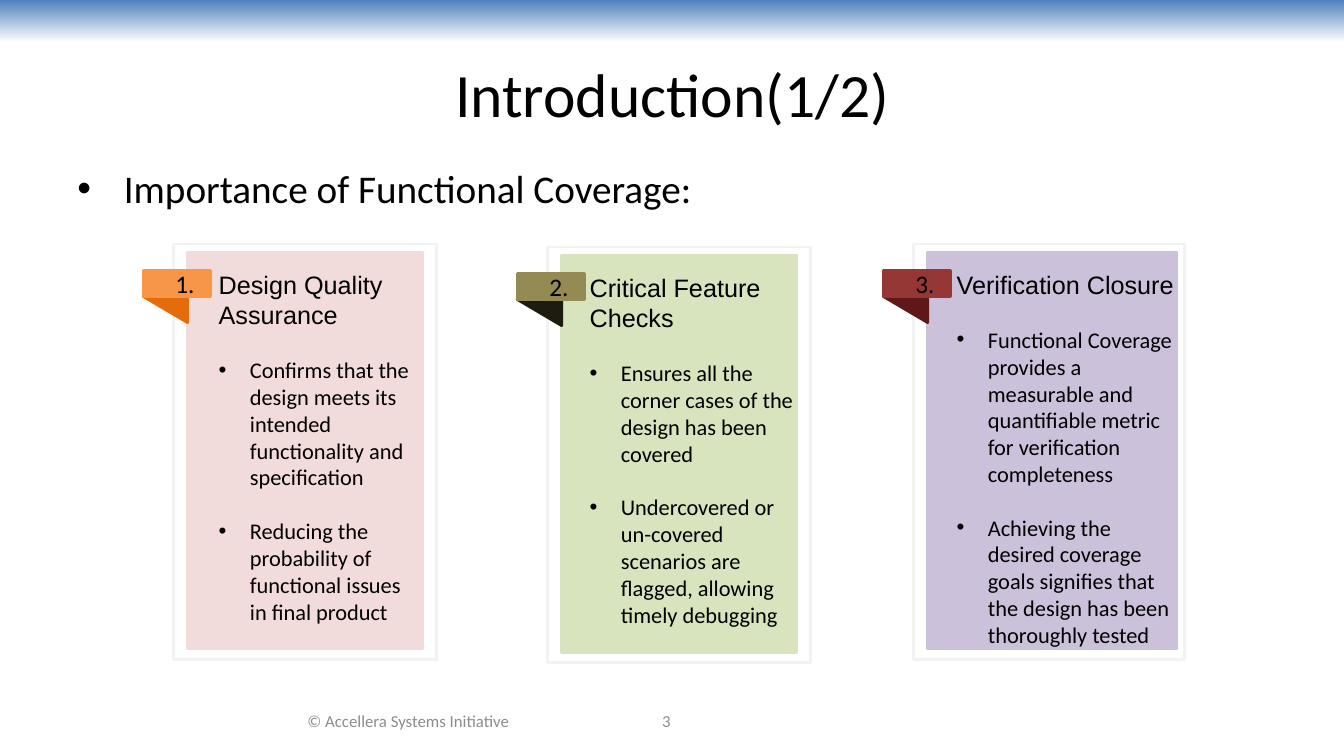
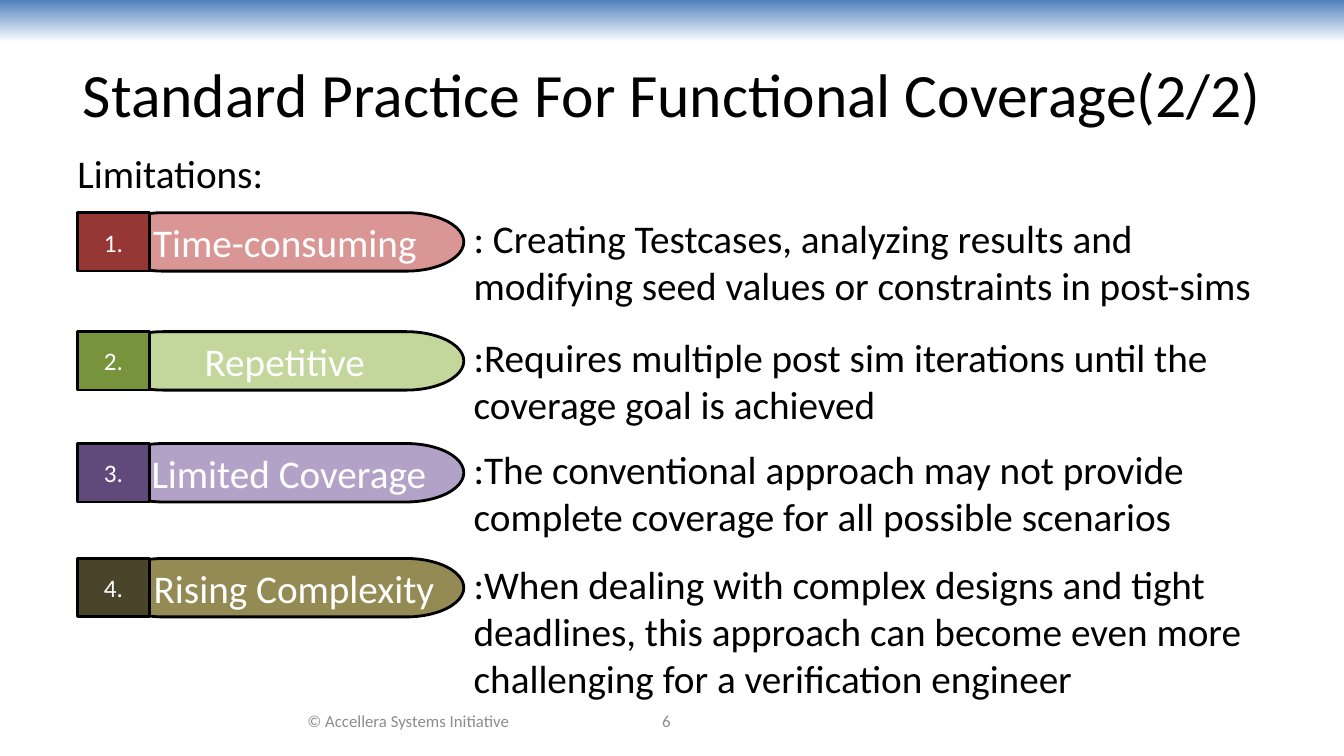
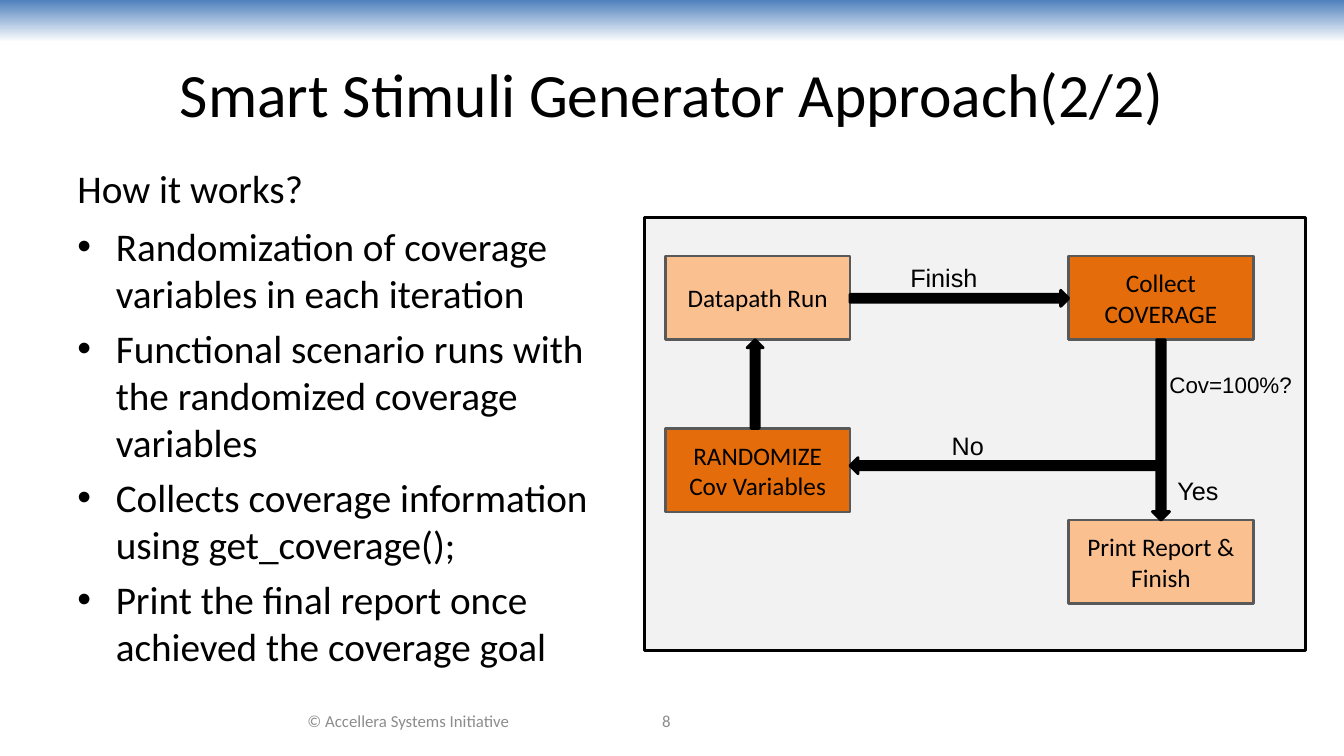
import pptx
import pptx.dml.color
import pptx.enum.shapes
import pptx.enum.text
import pptx.util
from lxml import etree
from pptx.oxml.ns import qn

Inches = pptx.util.Inches
Pt = pptx.util.Pt
SHAPE = pptx.enum.shapes.MSO_SHAPE
ALIGN = pptx.enum.text.PP_ALIGN
ANCHOR = pptx.enum.text.MSO_ANCHOR

BLACK, WHITE, GREY = "000000", "FFFFFF", "8C8C8C"
BLUE, FRAME, PALE, EDGE = "4F81BD", "F2F2F2", "F2F2F2", "595959"
PEACH, ORANGE = "FAC090", "E46C0A"
BODY, PLAIN = "Calibri", "Arial"
NOTICE = "© Accellera Systems Initiative"


def color(code):
    return pptx.dml.color.RGBColor.from_string(code)


def style(para, size, ink=BLACK, face=BODY, align=ALIGN.LEFT):
    para.alignment = align
    font = para.font
    font.size, font.name = Pt(size), face
    font.color.rgb = color(ink)


def bullet(para, indent):
    """Give the paragraph a round bullet with a hanging indent in inches."""
    props = para._p.get_or_add_pPr()
    props.set("marL", str(Inches(indent)))
    props.set("indent", str(-Inches(indent)))
    etree.SubElement(props, qn("a:buFont")).set("typeface", "Arial")
    etree.SubElement(props, qn("a:buChar")).set("char", "•")


def add_text(slide, box, words, size, ink=BLACK, face=BODY,
             align=ALIGN.LEFT, anchor=ANCHOR.TOP):
    frame = slide.shapes.add_textbox(*map(Inches, box)).text_frame
    frame.word_wrap = True
    frame.vertical_anchor = anchor
    para = frame.paragraphs[0]
    para.text = words
    style(para, size, ink, face, align)
    return frame


def add_list(slide, box, items, indent):
    frame = slide.shapes.add_textbox(*map(Inches, box)).text_frame
    frame.word_wrap = True
    for i, item in enumerate(items):
        para = frame.add_paragraph() if i else frame.paragraphs[0]
        para.text = item
        bullet(para, indent)
        if i:
            para.space_before = Pt(5.6)
        style(para, 28)


def add_shape(slide, kind, box, fill=None, line=None, words="",
              size=18, ink=BLACK):
    shape = slide.shapes.add_shape(kind, *map(Inches, box))
    shape.shadow.inherit = False
    if fill:
        shape.fill.solid()
        shape.fill.fore_color.rgb = color(fill)
    else:
        shape.fill.background()
    shape.line.color.rgb = color(line or fill)
    shape.line.width = Pt(2)
    if words:
        frame = shape.text_frame
        frame.word_wrap = True
        frame.vertical_anchor = ANCHOR.MIDDLE
        frame.paragraphs[0].text = words
        style(frame.paragraphs[0], size, ink, align=ALIGN.CENTER)
    return shape


def add_slide(deck, title, number):
    """Add a slide with the shared band, title and footer."""
    slide = deck.slides.add_slide(deck.slide_layouts[6])
    band = add_shape(slide, SHAPE.RECTANGLE, (0, 0, 13.33, 0.42), BLUE)
    band.line.fill.background()
    band.fill.gradient()
    band.fill.gradient_angle = 270
    for stop, code in zip(band.fill.gradient_stops, (BLUE, WHITE)):
        stop.color.rgb = color(code)
    for box, words, size, ink in (
            ((0.67, 0.3, 12, 1.25), title, 44, BLACK),
            ((2.44, 6.95, 3.22, 0.4), NOTICE, 12, GREY),
            ((5.33, 6.95, 2.56, 0.4), str(number), 12, GREY)):
        add_text(slide, box, words, size, ink,
                 align=ALIGN.CENTER, anchor=ANCHOR.MIDDLE)
    return slide


def add_card(slide, box, panel, inset, width, fills, number, head, points):
    """Draw a framed card; panel, inset and width size its inner parts."""
    x, y, w, h = box
    back, tab, fold = fills
    add_shape(slide, SHAPE.RECTANGLE, box, line=FRAME)
    add_shape(slide, SHAPE.RECTANGLE, (x + 0.14, y + 0.08, panel, 3.94), back)
    flap = add_shape(slide, SHAPE.RIGHT_TRIANGLE,
                     (x - 0.3, y + 0.52, 0.44, 0.26), fold)
    flap.rotation = 180
    add_shape(slide, SHAPE.RECTANGLE, (x - 0.3, y + 0.26, 0.67, 0.26), tab)
    add_text(slide, (x - 0.08, y + 0.19, 0.44, 0.42), f"{number}.", 18)
    frame = add_text(slide, (x + inset, y + 0.2, width, h - 0.3),
                     head, 18, face=PLAIN)
    for point in points:
        para = frame.add_paragraph()
        para.text = point
        bullet(para, 0.31)
        para.space_before = Pt(19)
        style(para, 16)


def add_limit(slide, x, y, number, name, shift, fills, words):
    """Draw a numbered pill, its name moved right by shift, and its text."""
    light, dark = fills
    pill = add_shape(slide, SHAPE.FLOWCHART_TERMINATOR,
                     (x + 0.28, y, 3.55, 0.58), light, BLACK, name, 28, WHITE)
    pill.text_frame.margin_left = Inches(0.05 + 2 * shift)
    pill.text_frame.margin_right = Inches(0.05)
    add_shape(slide, SHAPE.RECTANGLE, (x, y, 0.71, 0.58), dark, BLACK,
              f"{number}.", 18, WHITE)
    add_text(slide, (x + 3.83, y - 0.03, 8.2, 1.04), words, 28)


def add_flow(slide, box):
    x, y = box[:2]
    add_shape(slide, SHAPE.FLOWCHART_PROCESS, box, PALE, BLACK)
    left, right, top = 0.21, 4.21, 0.38
    for dx, dy, fill, words in (
            (left, top, PEACH, "Datapath Run"),
            (right, top, ORANGE, "Collect COVERAGE"),
            (right, 3, PEACH, "Print Report & Finish"),
            (left, 2.09, ORANGE, "RANDOMIZE Cov Variables")):
        add_shape(slide, SHAPE.FLOWCHART_PROCESS,
                  (x + dx, y + dy, 1.83, 0.83), fill, EDGE, words)
    for kind, dx, dy, w, h in (
            (SHAPE.RIGHT_ARROW, 2.04, 0.72, 2.17, 0.16),
            (SHAPE.DOWN_ARROW, 5.04, 1.21, 0.17, 1.79),
            (SHAPE.LEFT_ARROW, 2.04, 2.38, 3.07, 0.16),
            (SHAPE.UP_ARROW, 1.02, 1.21, 0.16, 0.88)):
        add_shape(slide, kind, (x + dx, y + dy, w, h), BLACK)
    for dx, dy, w, words, size in (
            (2.54, 0.39, 1.33, "Finish", 18),
            (5.11, 1.47, 1.45, "Cov=100%?", 16),
            (5.19, 2.51, 0.86, "Yes", 18),
            (2.95, 2.06, 0.86, "No", 18)):
        add_text(slide, (x + dx, y + dy, w, 0.4), words, size, face=PLAIN)


def build_intro(deck):
    slide = add_slide(deck, "Introduction(1/2)", 3)
    add_list(slide, (0.67, 1.58, 12, 0.67),
             ["Importance of Functional Coverage:"], 0.46)
    cards = (
        ((1.72, 2.42, 2.61, 4.12), 2.33, 0.35, 2.11,
         ("F2DCDB", "F79646", ORANGE), "Design Quality Assurance",
         ("Confirms that the design meets its intended functionality and "
          "specification",
          "Reducing the probability of functional issues in final product")),
        ((5.43, 2.45, 2.61, 4.12), 2.33, 0.32, 2.25,
         ("D7E4BD", "948A54", "1E1C11"), "Critical Feature Checks",
         ("Ensures all the corner cases of the design has been covered",
          "Undercovered or un-covered scenarios are flagged, allowing timely "
          "debugging")),
        ((9.06, 2.42, 2.69, 4.12), 2.47, 0.33, 2.36,
         ("CCC1DA", "953735", "5E1818"), "Verification Closure",
         ("Functional Coverage provides a measurable and quantifiable metric "
          "for verification completeness",
          "Achieving the desired coverage goals signifies that the design has "
          "been thoroughly tested")))
    for i, (box, panel, inset, width, fills, head, points) in enumerate(cards, 1):
        add_card(slide, box, panel, inset, width, fills, i, head, points)


def build_limits(deck):
    slide = add_slide(deck, "Standard Practice For Functional Coverage(2/2)", 6)
    add_text(slide, (0.67, 1.43, 2.92, 0.67), "Limitations:", 28)
    limits = (
        (2.11, "Time-consuming", 0, ("D99694", "953735"),
         ": Creating Testcases, analyzing results and modifying seed values "
         "or constraints in post-sims"),
        (3.29, "Repetitive", 0, ("C3D69B", "77933C"),
         ":Requires multiple post sim iterations until the coverage goal is "
         "achieved"),
        (4.4, "Limited Coverage", 0.04, ("B3A2C7", "604A7B"),
         ":The conventional approach may not provide complete coverage for "
         "all possible scenarios"),
        (5.54, "Rising Complexity", 0.09, ("948A54", "4A452A"),
         ":When dealing with complex designs and tight deadlines, this "
         "approach can become even more challenging for a verification "
         "engineer"))
    for i, (y, name, shift, fills, words) in enumerate(limits, 1):
        add_limit(slide, 0.77, y, i, name, shift, fills, words)


def build_smart(deck):
    slide = add_slide(deck, "Smart Stimuli Generator Approach(2/2)", 8)
    add_text(slide, (0.67, 1.58, 2.58, 0.58), "How it works?", 28)
    add_flow(slide, (6.39, 2.16, 6.56, 4.29))
    add_list(slide, (0.67, 2.16, 5.65, 4.5), [
        "Randomization of coverage variables in each iteration",
        "Functional scenario runs with the randomized coverage variables",
        "Collects coverage information using get_coverage();",
        "Print the final report once achieved the coverage goal"], 0.38)


def main():
    deck = pptx.Presentation()
    deck.slide_width, deck.slide_height = Inches(13.33), Inches(7.5)
    build_intro(deck)
    build_limits(deck)
    build_smart(deck)
    deck.save("out.pptx")


if __name__ == "__main__":
    main()
